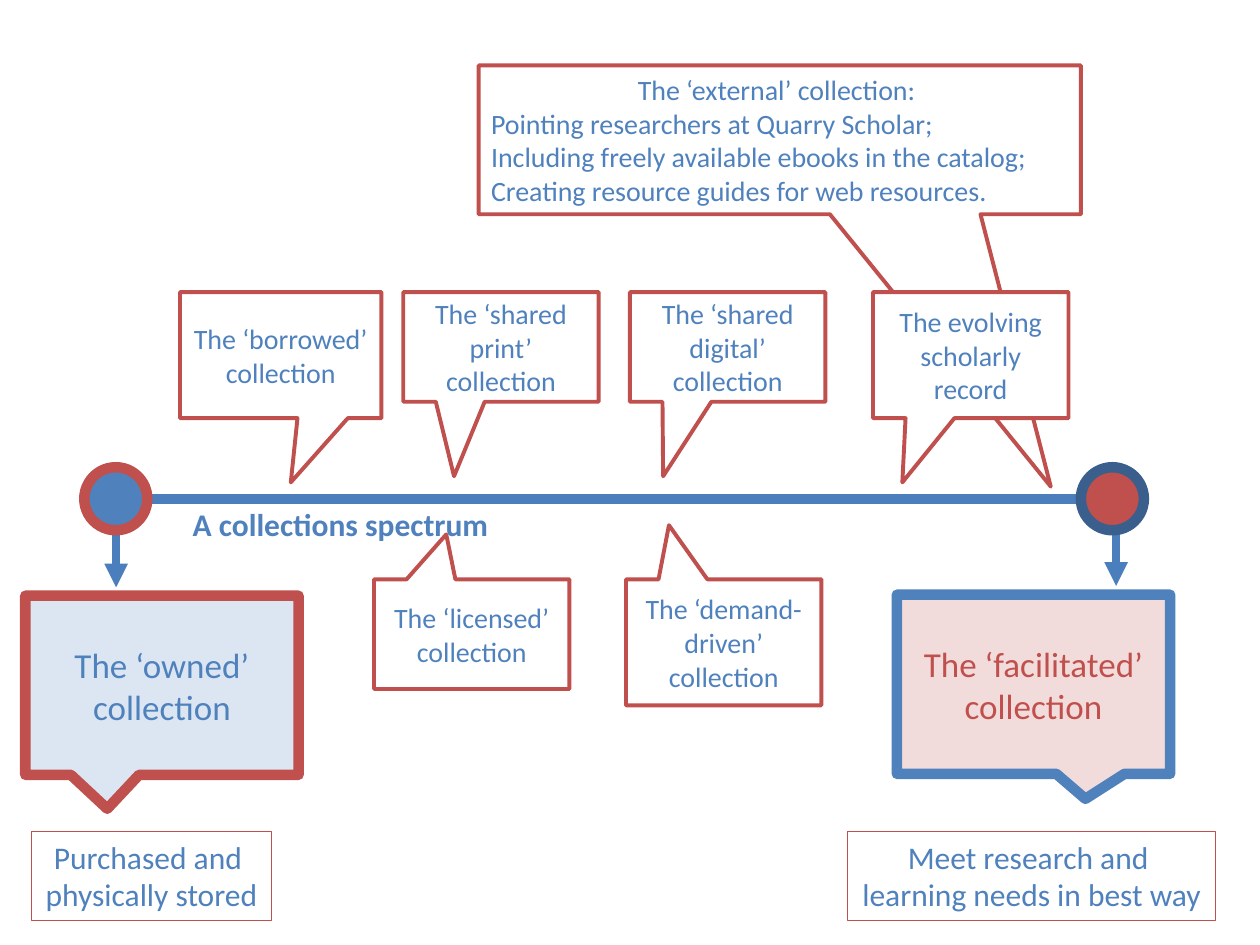
from pptx import Presentation
from pptx import util as u
from pptx.dml.color import RGBColor
from pptx.enum import shapes, text
from pptx.oxml.ns import qn
from lxml import etree

C = {"blue": "4F81BD", "red": "C0504D", "line": "4B7EBC", "navy": "3A5F8C",
     "white": "FFFFFF", "pale blue": "DCE6F2", "pale red": "F2DCDB"}


def add_shape(kind, box, fill, line, width):
    sp = s.shapes.add_shape(kind, *[u.Cm(v) for v in box])
    sp.shadow.inherit = False
    if fill:
        sp.fill.solid()
        sp.fill.fore_color.rgb = RGBColor.from_string(C[fill])
    else:
        sp.fill.background()
    sp.line.color.rgb = RGBColor.from_string(C[line])
    sp.line.width = u.Pt(width)
    return sp


def set_text(sp, content, size, color="blue", align=text.PP_ALIGN.CENTER, bold=False):
    tf = sp.text_frame
    tf.text = content
    for p in tf.paragraphs:
        p.alignment = align
        for r in p.runs:
            r.font.name = "Calibri"
            r.font.size = u.Pt(size)
            r.font.bold = bold
            r.font.color.rgb = RGBColor.from_string(C[color])
    return tf


prs = Presentation()
prs.slide_width, prs.slide_height = u.Cm(25.4), u.Cm(19.05)
s = prs.slides.add_slide(prs.slide_layouts[5])

title = s.shapes.title
title.left, title.top, title.width, title.height = u.Cm(3.63), u.Cm(10.06), u.Cm(7.19), u.Cm(1.02)
tf = set_text(title, "A collections spectrum", 18, align=text.PP_ALIGN.LEFT, bold=True)
tf.vertical_anchor = text.MSO_ANCHOR.TOP
tf.auto_size = text.MSO_AUTO_SIZE.NONE

external = ("The ‘external’ collection: \nPointing researchers at Quarry Scholar;\n"
            "Including freely available ebooks in the catalog;\n"
            "Creating resource guides for web resources.")
small = ("white", "red", 2.25, 16, "blue")
callouts = [
    (external, (9.65, 1.32, 12.14, 3), (0.45, 2.33), small),
    ("The ‘owned’ collection", (0.51, 12.01, 5.51, 3.61), (-0.2, 0.69),
     ("pale blue", "red", 6, 20, "blue")),
    ("The ‘facilitated’ collection", (18.08, 11.99, 5.51, 3.61), (0.19, 0.64),
     ("pale red", "blue", 6, 20, "red")),
    ("The ‘borrowed’ collection", (3.63, 5.89, 4.06, 2.54), (0.05, 1.01), small),
    ("The ‘shared print’ collection", (8.13, 5.89, 3.94, 2.21), (-0.24, 1.18), small),
    ("The ‘shared digital’ collection", (12.7, 5.89, 3.94, 2.21), (-0.33, 1.18), small),
    ("The evolving scholarly record", (17.6, 5.89, 3.94, 2.54), (-0.35, 1.01), small),
    ("The ‘licensed’ collection", (7.54, 11.68, 3.94, 2.21), (-0.13, -0.91), small),
    ("The ‘demand-driven’ collection", (12.62, 11.68, 3.94, 2.54), (-0.28, -0.93), small),
]
for content, box, tip, (fill, line, width, size, color) in callouts:
    sp = add_shape(shapes.MSO_SHAPE.RECTANGULAR_CALLOUT, box, fill, line, width)
    sp.adjustments[0], sp.adjustments[1] = tip
    tf = set_text(sp, content, size, color)
    tf.word_wrap = True
    tf.vertical_anchor = text.MSO_ANCHOR.MIDDLE
    for p in tf.paragraphs[1:]:
        p.alignment = text.PP_ALIGN.LEFT

for x1, y1, x2, y2, width, arrow in [
    (2.34, 10.67, 2.34, 11.84, 4.5, True),
    (22.5, 10.57, 22.5, 11.81, 4.5, True),
    (2.97, 10.06, 21.79, 10.06, 6, False),
]:
    cn = s.shapes.add_connector(shapes.MSO_CONNECTOR.STRAIGHT,
                                u.Cm(x1), u.Cm(y1), u.Cm(x2), u.Cm(y2))
    cn.line.color.rgb = RGBColor.from_string(C["line"])
    cn.line.width = u.Pt(width)
    if arrow:
        etree.SubElement(cn.line._get_or_add_ln(), qn("a:tailEnd"), type="triangle")
    etree.SubElement(cn._element.spPr, qn("a:effectLst"))

for x, fill, line in [(1.7, "blue", "red"), (21.79, "red", "navy")]:
    add_shape(shapes.MSO_SHAPE.OVAL, (x, 9.42, 1.27, 1.27), fill, line, 6)

for x, w, content in [
    (0.64, 4.83, "Purchased and \vphysically stored"),
    (17.09, 7.42, "Meet research and \nlearning needs in best way"),
]:
    sp = add_shape(shapes.MSO_SHAPE.RECTANGLE, (x, 16.76, w, 1.8), None, "red", 0.75)
    tf = set_text(sp, content, 18)
    tf.word_wrap = False
    tf.auto_size = text.MSO_AUTO_SIZE.SHAPE_TO_FIT_TEXT
    tf.vertical_anchor = text.MSO_ANCHOR.TOP

prs.save("out.pptx")
